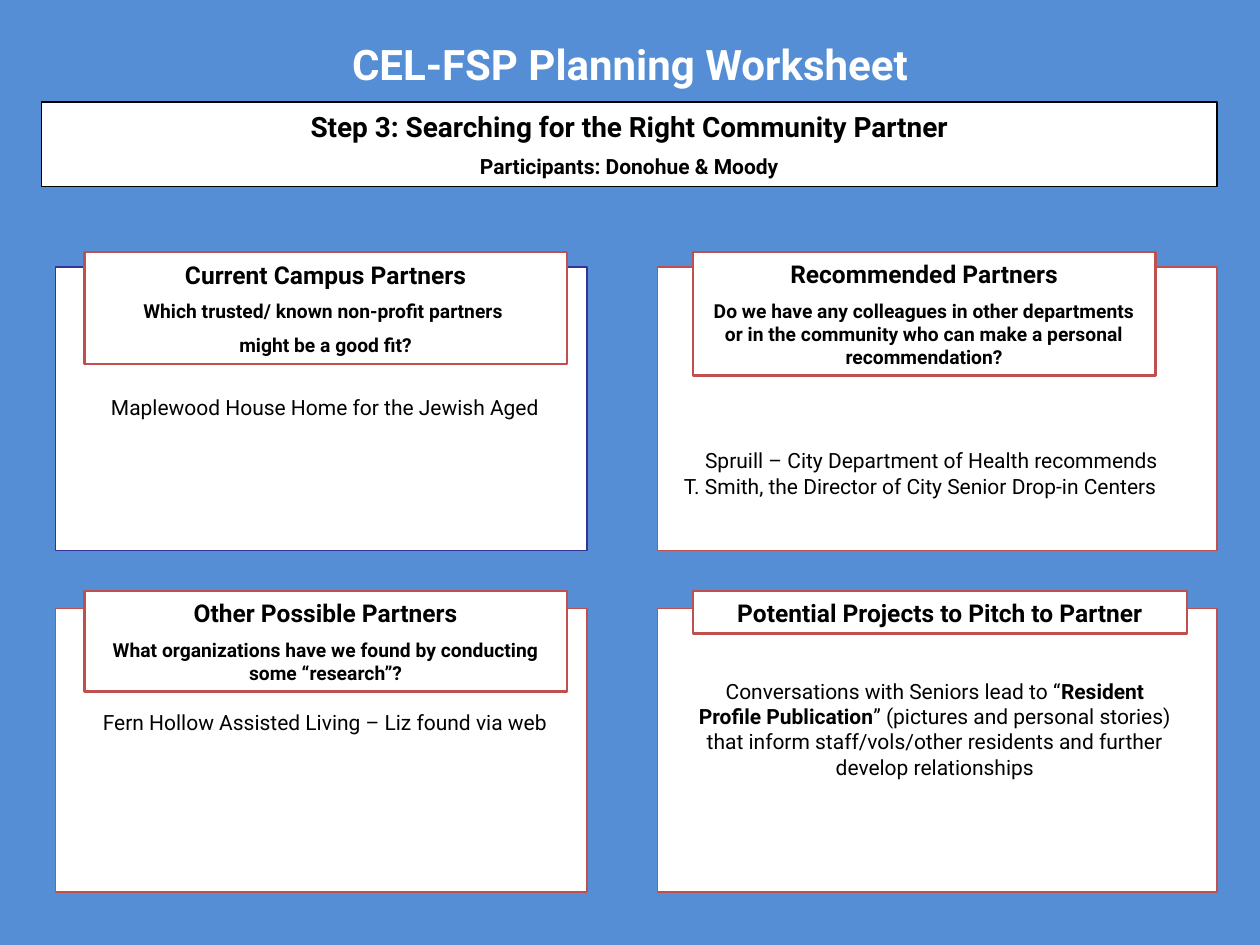
from pptx import Presentation
from pptx.dml.color import RGBColor as RGB
from pptx.enum.shapes import MSO_SHAPE as Shape
from pptx.enum.text import MSO_ANCHOR as Anchor, PP_ALIGN as Align
from pptx.util import Inches, Pt

BLUE = RGB(0x55, 0x8E, 0xD5)
WHITE = RGB(0xFF, 0xFF, 0xFF)
BLACK = RGB(0, 0, 0)
RED = RGB(0xC0, 0x50, 0x4D)
NAVY = RGB(0x33, 0x33, 0x99)


class Sheet:
    font = "Roboto"
    gap = Pt(6)

    def __init__(self, slide):
        self.slide = slide
        fill = slide.background.fill
        fill.solid()
        fill.fore_color.rgb = BLUE

    def box(self, x, y, w, h, line, width):
        """White rectangle with a coloured outline."""
        box = self.slide.shapes.add_shape(
            Shape.RECTANGLE, Inches(x), Inches(y), Inches(w), Inches(h))
        box.shadow.inherit = False
        box.fill.solid()
        box.fill.fore_color.rgb = WHITE
        box.line.color.rgb = line
        box.line.width = Pt(width)
        return box

    def set_text(self, shape, lines, color=BLACK, bold=True):
        """Fill a shape with centred (text, size) lines."""
        frame = shape.text_frame
        frame.word_wrap = True
        frame.vertical_anchor = Anchor.MIDDLE
        for i, (text, size) in enumerate(lines):
            para = frame.add_paragraph() if i else frame.paragraphs[0]
            para.alignment = Align.CENTER
            if i and bold:
                para.space_before = self.gap
            font = para.font
            font.name, font.size, font.bold = self.font, Pt(size), bold
            font.color.rgb = color
            para.add_run().text = text
        return frame.paragraphs

    def label(self, x, y, w, h, lines, line=RED, width=1.5):
        """Outlined box with bold text."""
        self.set_text(self.box(x, y, w, h, line, width), lines)

    def note(self, x, y, w, h, lines, color=BLACK, bold=False):
        """Plain text box."""
        note = self.slide.shapes.add_textbox(
            Inches(x), Inches(y), Inches(w), Inches(h))
        return self.set_text(note, lines, color, bold)


def main():
    deck = Presentation()
    deck.slide_width, deck.slide_height = Inches(10), Inches(7.5)
    sheet = Sheet(deck.slides.add_slide(deck.slide_layouts[6]))

    # Four answer cards
    for y, left in ((4.83, RED), (2.12, NAVY)):
        sheet.box(5.22, y, 4.44, 2.25, RED, 0.75)
        sheet.box(0.44, y, 4.22, 2.25, left, 0.75)

    # Title and step banner
    sheet.note(0, 0.25, 10, 0.51, [("CEL-FSP Planning Worksheet", 24)],
               WHITE, True)
    sheet.label(0.33, 0.81, 9.33, 0.67, [
        ("Step 3: Searching for the Right Community Partner", 16),
        ("Participants: Donohue & Moody", 12)], BLACK, 1)

    # Card headings with their questions
    heads = [
        (0.67, 2, 3.83, 0.89, "Current Campus Partners",
         "Which trusted/ known non-profit partners ", "might be a good fit?"),
        (5.5, 2, 3.67, 0.98, "Recommended Partners",
         "Do we have any colleagues in other departments or in the "
         "community who can make a personal recommendation?"),
        (0.67, 4.69, 3.83, 0.8, "Other Possible Partners",
         "What organizations have we found by conducting some “research”?"),
        (5.5, 4.69, 3.92, 0.34, "Potential Projects to Pitch to Partner"),
    ]
    for x, y, w, h, head, *asks in heads:
        sheet.label(x, y, w, h, [(head, 14)] + [(ask, 11) for ask in asks])

    # Answers, with invented organization names
    sheet.note(0.58, 3.08, 4, 0.3,
               [("Maplewood House Home for the Jewish Aged", 12)])
    sheet.note(0.58, 5.58, 4, 0.3,
               [("Fern Hollow Assisted Living – Liz found via web", 12)])
    paras = sheet.note(5.33, 3.5, 4.17, 0.51, [
        ("Spruill – City Department of Health recommends ", 12),
        ("T. Smith, the Director of City Senior Drop-in Centers", 12)])
    paras[1].alignment = Align.LEFT

    # Pitch, with the project name in bold
    pitch = sheet.note(5.42, 5.33, 4, 0.91, [
        ("Conversations with Seniors lead to “", 12)])[0]
    name = pitch.add_run()
    name.text = "Resident Profile Publication"
    name.font.bold = True
    pitch.add_run().text = (
        "” (pictures and personal stories) that inform staff/vols/other "
        "residents and further develop relationships")

    deck.save("out.pptx")


if __name__ == "__main__":
    main()
